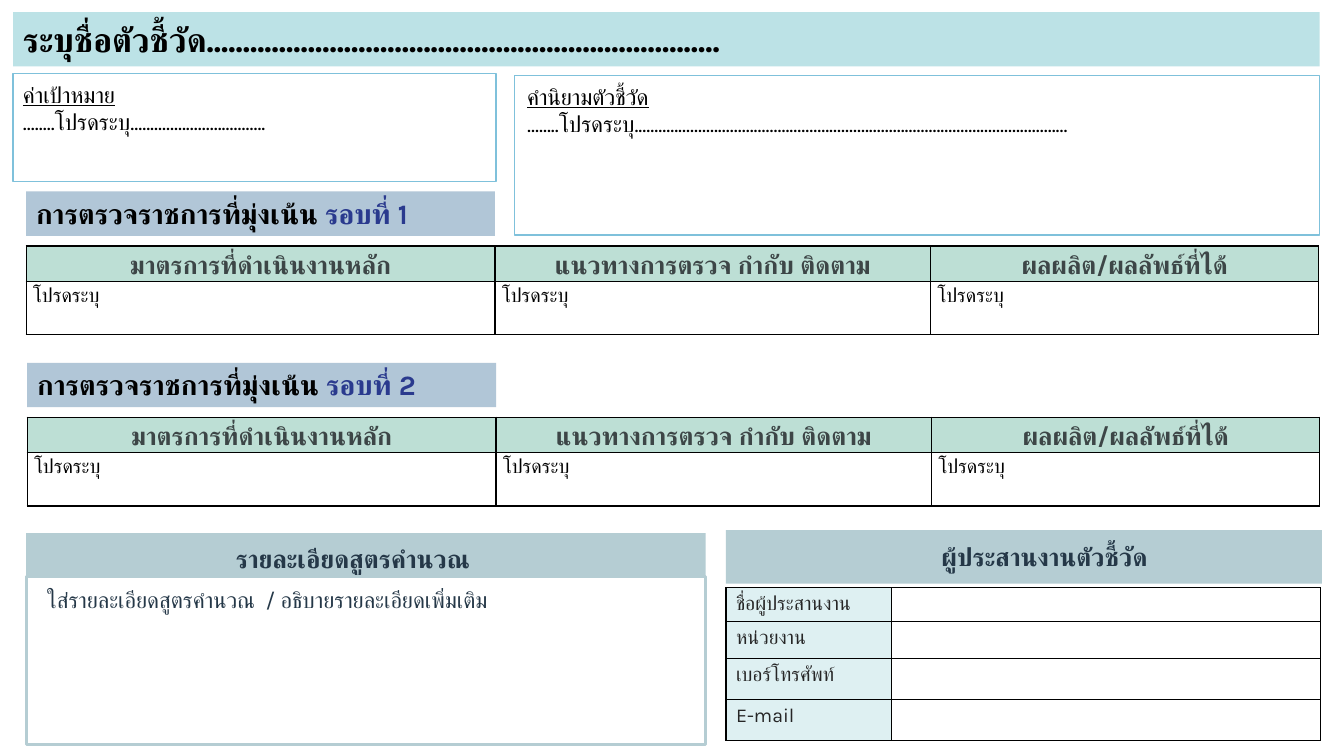
from lxml import etree
from pptx import Presentation
from pptx.dml.color import RGBColor
from pptx.enum.shapes import MSO_SHAPE as Shape
from pptx.enum.text import MSO_ANCHOR as Anchor, MSO_AUTO_SIZE as AutoSize, PP_ALIGN as Align
from pptx.oxml.ns import qn
from pptx.util import Emu, Pt

EMU_PER_PX = 9144  # 100 px to the inch

BLACK, GREY, NAVY, INK = "000000", "3D4647", "253848", "262626"
BLUE_TEXT, TITLE_FILL, BAND_FILL = "2A3A8E", "BCE2E6", "B1C6D7"
PANEL, HEAD_FILL, LABEL_FILL, OUTLINE = "B5CDD3", "BDDFD5", "DEF0F2", "7FC1DB"


def px(n):
    return Emu(n * EMU_PER_PX)


def rgb(color):
    return RGBColor.from_string(color)


class SlideBuilder:
    font = "Karla"

    def __init__(self, prs):
        self.slide = prs.slides.add_slide(prs.slide_layouts[6])

    def run(self, p, text, size, color=BLACK, bold=False, underline=False):
        r = p.add_run()
        r.text = text
        r.font.name = self.font
        r.font.size = Pt(size)
        r.font.bold = bold
        r.font.underline = underline
        r.font.color.rgb = rgb(color)
        # Thai glyphs take the complex-script typeface
        r.font._element.append(etree.Element(qn("a:cs"), typeface=self.font))

    def rect(self, box, fill=None, line=None, width=1):
        sp = self.slide.shapes.add_shape(Shape.RECTANGLE, *map(px, box))
        sp.shadow.inherit = False
        if fill:
            sp.fill.solid()
            sp.fill.fore_color.rgb = rgb(fill)
        else:
            sp.fill.background()
        if line:
            sp.line.color.rgb = rgb(line)
            sp.line.width = Pt(width)
        else:
            sp.line.fill.background()
        return sp

    def put_text(self, sp, paragraphs, align=Align.LEFT, anchor=Anchor.TOP):
        """Fill a shape; each paragraph is a list of argument tuples for run()."""
        tf = sp.text_frame
        tf.word_wrap = True
        tf.vertical_anchor = anchor
        for i, runs in enumerate(paragraphs):
            p = tf.add_paragraph() if i else tf.paragraphs[0]
            p.alignment = align
            for args in runs:
                self.run(p, *args)

    def text(self, box, paragraphs, align=Align.LEFT):
        sp = self.slide.shapes.add_textbox(*map(px, box))
        self.put_text(sp, paragraphs, align)
        sp.text_frame.auto_size = AutoSize.SHAPE_TO_FIT_TEXT

    def table(self, left, top, cols, rows):
        """Add a plain table and return it with its style flags off."""
        frame = self.slide.shapes.add_table(
            len(rows), len(cols), px(left), px(top), px(sum(cols)), px(sum(rows)))
        table = frame.table
        table.first_row = table.horz_banding = False
        for col, width in zip(table.columns, cols):
            col.width = px(width)
        for row, height in zip(table.rows, rows):
            row.height = px(height)
        return table

    def cell(self, cell, text, size, color=BLACK, bold=False, fill=None):
        p = cell.text_frame.paragraphs[0]
        if text:
            self.run(p, text, size, color, bold)
        else:
            etree.SubElement(p._p, qn("a:endParaRPr"), sz=str(size * 100))
        if fill:
            cell.fill.solid()
            cell.fill.fore_color.rgb = rgb(fill)
        else:
            cell.fill.background()
        self.borders(cell)
        return p

    def borders(self, cell):
        tc_pr = cell._tc.get_or_add_tcPr()
        for i, side in enumerate("LRTB"):
            ln = etree.Element(qn(f"a:ln{side}"), w=str(Pt(1)))
            solid = etree.SubElement(ln, qn("a:solidFill"))
            etree.SubElement(solid, qn("a:srgbClr"), val=BLACK)
            tc_pr.insert(i, ln)

    def inspection_round(self, number, left, top):
        """Add the band of one inspection round and the table under it."""
        band = self.rect((left, top, 465, 44), BAND_FILL)
        self.put_text(band, [[("การตรวจราชการที่มุ่งเน้น ", 20, BLACK, True),
                              (f"รอบที่ {number}", 20, BLUE_TEXT, True)]])
        headings = ("มาตรการที่ดำเนินงานหลัก", "แนวทางการตรวจ กำกับ ติดตาม",
                    "ผลผลิต/ผลลัพธ์ที่ได้")
        table = self.table(left, top + 54, (465, 432, 385), (35, 53))
        for i, heading in enumerate(headings):
            head, body = table.cell(0, i), table.cell(1, i)
            head.vertical_anchor = Anchor.MIDDLE
            for cell in (head, body):
                cell.margin_left = cell.margin_right = px(7)
                cell.margin_top = cell.margin_bottom = 0
            p = self.cell(head, heading, 18, GREY, True, HEAD_FILL)
            p.alignment = Align.CENTER
            p.line_spacing = 1.15
            self.cell(body, "โปรดระบุ", 14).line_spacing = 1.15

    def labelled_box(self, box, text_box, label, dots):
        self.rect(box, line=OUTLINE)
        self.text(text_box, [[(label, 16, BLACK, False, True)],
                             [("........โปรดระบุ" + "." * dots, 16)]])

    def panel_title(self, box, text_box, title):
        self.rect(box, PANEL)
        self.text(text_box, [[(title, 18, NAVY, True)]], Align.CENTER)

    def contacts(self, left, top):
        labels = ("ชื่อผู้ประสานงาน", "หน่วยงาน", "เบอร์โทรศัพท์", "E-mail")
        table = self.table(left, top, (164, 426), (34, 36, 41, 41))
        for i, label in enumerate(labels):
            self.cell(table.cell(i, 0), label, 14, INK, fill=LABEL_FILL)
            self.cell(table.cell(i, 1), "", 14)


def main():
    prs = Presentation()
    prs.slide_width, prs.slide_height = px(1333), px(750)
    s = SlideBuilder(prs)

    s.inspection_round(1, 26, 190)
    s.inspection_round(2, 27, 360)

    s.panel_title((26, 529, 674, 44), (190, 534, 320, 40), "รายละเอียดสูตรคำนวณ")
    s.rect((26, 572, 674, 167), line=PANEL, width=2.25)
    s.text((37, 577, 653, 37),
           [[("ใส่รายละเอียดสูตรคำนวณ  / อธิบายรายละเอียดเพิ่มเติม", 16, NAVY)]])

    s.panel_title((720, 526, 591, 53), (876, 532, 320, 40), "ผู้ประสานงานตัวชี้วัด")
    s.contacts(720, 583)

    title = s.rect((13, 12, 1296, 54), TITLE_FILL)
    s.put_text(title, [[("ระบุชื่อตัวชี้วัด" + "." * 71, 24, BLACK, True)]],
               anchor=Anchor.MIDDLE)
    s.labelled_box((510, 75, 799, 158), (513, 78, 792, 64), "คำนิยามตัวชี้วัด", 109)
    s.labelled_box((13, 73, 479, 107), (13, 76, 433, 64), "ค่าเป้าหมาย", 34)

    prs.save("out.pptx")


if __name__ == "__main__":
    main()
